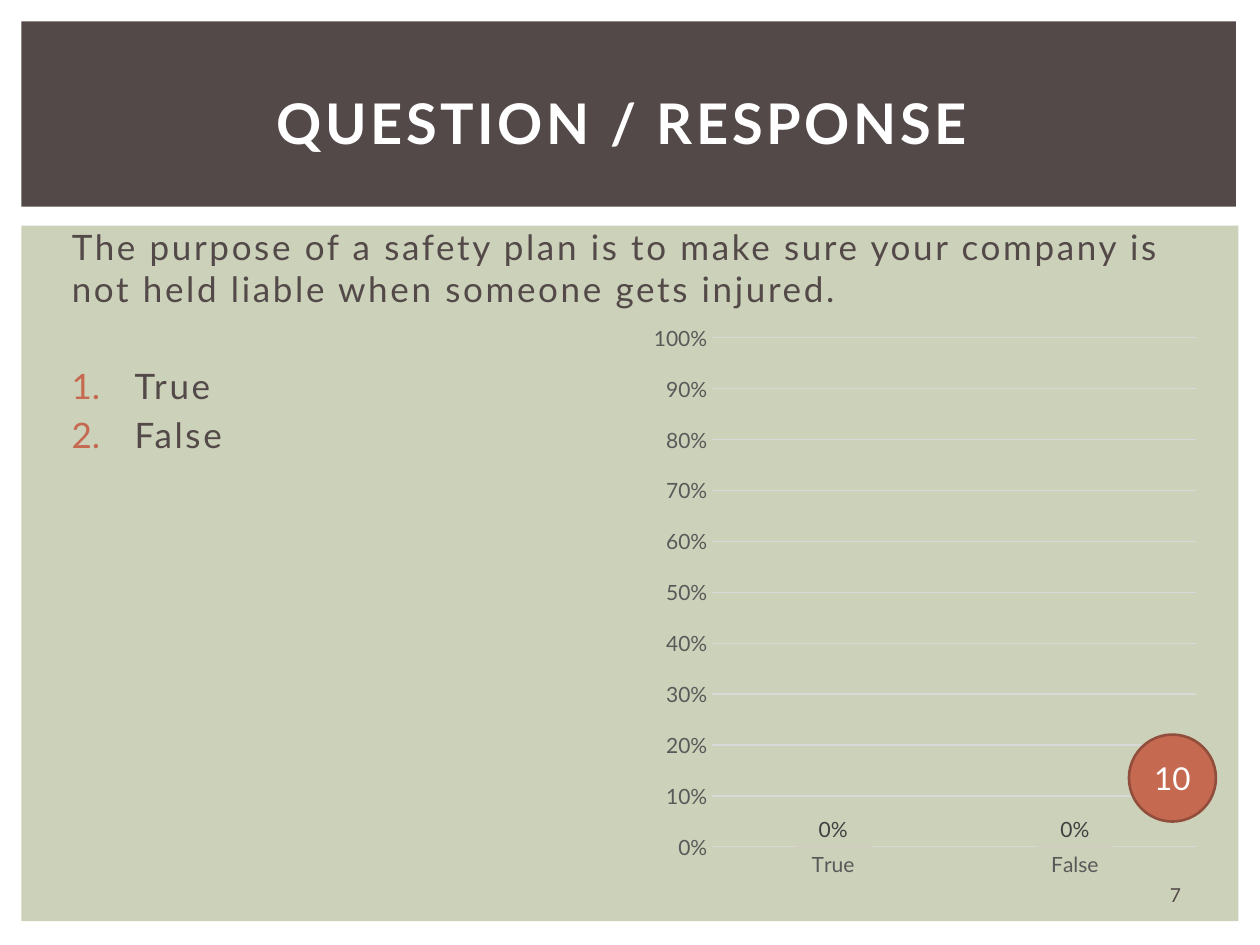
"""Build a true-or-false question slide with a response chart."""
from lxml import etree
from pptx import Presentation
from pptx.chart.data import CategoryChartData
from pptx.dml.color import RGBColor
from pptx.enum import chart as ch, shapes as sh, text as tx
from pptx.oxml.ns import qn
from pptx.util import Inches, Pt

FONT = "Lato"
WHITE = RGBColor(0xFF, 0xFF, 0xFF)
SAGE = RGBColor(0xCC, 0xD1, 0xB9)
BROWN = RGBColor(0x53, 0x49, 0x49)
RUST = RGBColor(0xC6, 0x69, 0x51)
EDGE = RGBColor(0x92, 0x4E, 0x3C)
GRID = RGBColor(0xD9, 0xD9, 0xD9)
GREY = RGBColor(0x59, 0x59, 0x59)
DARK = RGBColor(0x40, 0x40, 0x40)
BLACK = RGBColor(0, 0, 0)


def style(font, size, color, bold=False):
    """Set the face, size, colour and weight of a font."""
    font.name, font.size, font.bold = FONT, Pt(size), bold
    font.color.rgb = color


def add_form(slide, kind, box, fill, edge=None):
    """Add a filled preset shape."""
    form = slide.shapes.add_shape(kind, *map(Inches, box))
    form.shadow.inherit = False
    form.fill.solid()
    form.fill.fore_color.rgb = fill
    if edge:
        form.line.color.rgb = edge
        form.line.width = Pt(1.5)
    else:
        form.line.fill.background()
    return form


def number(para):
    """Give a paragraph a hanging, coloured automatic number."""
    props = para._p.get_or_add_pPr()
    props.set("marL", str(Inches(0.55)))
    props.set("indent", str(-Inches(0.5)))
    color = etree.SubElement(props, qn("a:buClr"))
    etree.SubElement(color, qn("a:srgbClr")).set("val", str(RUST))
    etree.SubElement(props, qn("a:buFont")).set("typeface", "+mj-lt")
    etree.SubElement(props, qn("a:buAutoNum")).set("type", "arabicPeriod")


def add_text(slide, box, lines, size, color, space=0, bold=False,
             center=False, listed=False):
    """Add a wrapped text box, with one paragraph for each line."""
    frame = slide.shapes.add_textbox(*map(Inches, box)).text_frame
    frame.word_wrap = True
    if center:
        frame.vertical_anchor = tx.MSO_ANCHOR.MIDDLE
    for i, line in enumerate(lines):
        para = frame.add_paragraph() if i else frame.paragraphs[0]
        run = para.add_run()
        run.text = line
        if i:
            para.space_before = Pt(size * 0.2)
        if center:
            para.alignment = tx.PP_ALIGN.CENTER
        if listed:
            number(para)
        style(para.font, size, color, bold)
        if space:
            run.font._element.set("spc", str(int(space * 100)))
    return frame


def draw_axis(axis):
    """Style the parts that both axes share."""
    axis.major_tick_mark = axis.minor_tick_mark = ch.XL_TICK_MARK.NONE
    style(axis.tick_labels.font, 12, GREY)


def draw_line(line):
    """Make a thin pale line."""
    line.color.rgb = GRID
    line.width = Pt(0.75)


def add_bars(slide, box, votes):
    """Add the column chart of response shares."""
    data = CategoryChartData(number_format="0%")
    data.categories = list(votes)
    data.add_series("Series 1", list(votes.values()))
    chart = slide.shapes.add_chart(
        ch.XL_CHART_TYPE.COLUMN_CLUSTERED, *map(Inches, box), data).chart
    chart.has_legend = chart.has_title = False
    style(chart.font, 10, BLACK)

    cat, val = chart.category_axis, chart.value_axis
    draw_axis(cat)
    draw_line(cat.format.line)
    draw_axis(val)
    val.format.line.fill.background()
    val.minimum_scale, val.maximum_scale, val.major_unit = 0, 1, 0.1
    val.tick_labels.number_format = "0%"
    val.tick_labels.number_format_is_linked = False
    draw_line(val.major_gridlines.format.line)

    plot = chart.plots[0]
    plot.vary_by_categories = False
    plot.gap_width, plot.overlap = 219, -27
    bars = plot.series[0]
    bars.format.fill.solid()
    bars.format.fill.fore_color.rgb = RUST
    tags = bars.data_labels
    tags.show_value = True
    tags.position = ch.XL_LABEL_POSITION.OUTSIDE_END
    tags.number_format, tags.number_format_is_linked = "0%", False
    style(tags.font, 12, DARK)


def add_badge(slide, box, label):
    """Add the round countdown badge."""
    badge = add_form(slide, sh.MSO_SHAPE.OVAL, box, RUST, EDGE)
    frame = badge.text_frame
    frame.word_wrap = False
    frame.margin_left = frame.margin_right = 0
    frame.margin_top = frame.margin_bottom = 0
    frame.vertical_anchor = tx.MSO_ANCHOR.MIDDLE
    para = frame.paragraphs[0]
    para.text = label
    para.alignment = tx.PP_ALIGN.CENTER
    style(para.font, 18, WHITE)


def main():
    """Build and save the slide."""
    deck = Presentation()
    deck.slide_width, deck.slide_height = Inches(10), Inches(7.5)
    slide = deck.slides.add_slide(deck.slide_layouts[6])
    rect = sh.MSO_SHAPE.RECTANGLE
    add_form(slide, rect, (0.17, 1.79, 9.66, 5.52), SAGE)
    add_form(slide, rect, (0.17, 0.17, 9.64, 1.47), BROWN)
    add_text(slide, (0.42, 0.39, 9.17, 1.15), ["QUESTION / RESPONSE "],
             32, WHITE, space=2, bold=True, center=True)
    add_text(slide, (9.01, 6.95, 0.64, 0.3), ["7"], 11, BROWN, center=True)
    ask = add_text(slide, (0.42, 1.74, 9.17, 0.9),
                   ["The purpose of a safety plan is to make sure your company "
                    "is not held liable when someone gets injured."],
                   20, BROWN, space=1.5)
    ask.margin_left = Inches(0.15)
    add_text(slide, (0.42, 2.84, 4.48, 3.86), ["True", "False"],
             20, BROWN, space=1.5, listed=True)
    add_bars(slide, (5.1, 2.49, 4.48, 4.56), {"True": 0, "False": 0})
    add_badge(slide, (8.96, 5.83, 0.69, 0.69), "10")
    deck.save("out.pptx")


if __name__ == "__main__":
    main()
